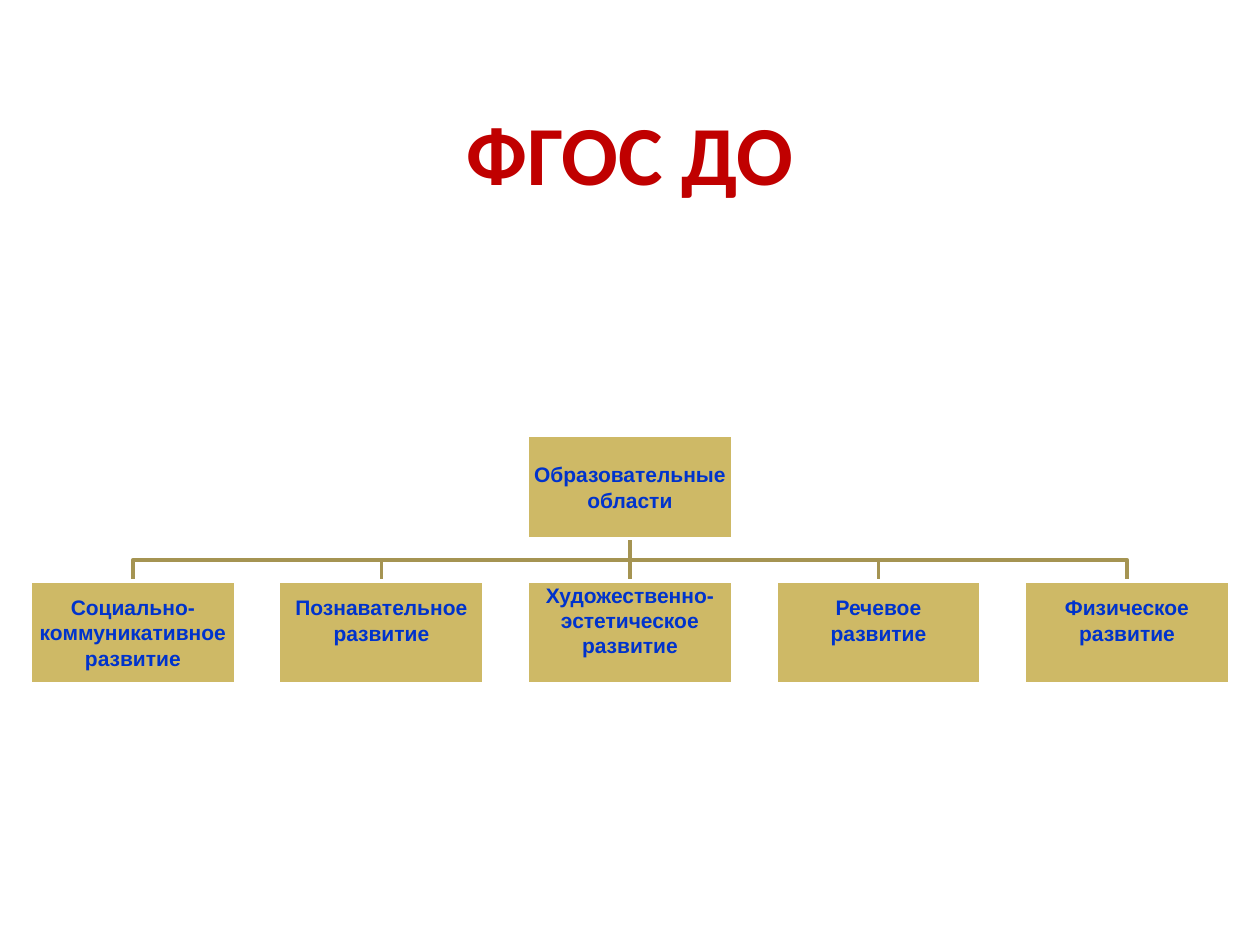
from dataclasses import dataclass

from lxml import etree
from pptx import Presentation, util as u
from pptx.dml.color import RGBColor
from pptx.enum import shapes, text
from pptx.oxml import ns


@dataclass(frozen=True)
class Theme:
    box_fill: RGBColor = RGBColor(0xCE, 0xB9, 0x66)
    box_border: RGBColor = RGBColor(0xFF, 0xFF, 0xFF)
    branch: RGBColor = RGBColor(0xA5, 0x94, 0x52)
    area: RGBColor = RGBColor(0x00, 0x33, 0xCC)
    heading: RGBColor = RGBColor(0xC0, 0x00, 0x00)
    area_font: str = "Arial"
    heading_font: str = "Calibri"
    area_size: int = u.Pt(12)
    heading_size: int = u.Pt(48)
    stroke: int = u.Pt(2)


class AreaChart:
    """Draws the heading, boxes and branches of an organisation chart on one slide."""

    def __init__(self, theme, slide):
        self.theme = theme
        self.canvas = slide.shapes

    def outline(self, part, color):
        part.line.color.rgb = color
        part.line.width = self.theme.stroke

    def label(self, frame, lines, frame_format, font_format, color):
        for name, value in frame_format.items():
            setattr(frame, name, value)
        frame.text = "\n".join(lines)
        for paragraph in frame.paragraphs:
            paragraph.alignment = text.PP_ALIGN.CENTER
            for name, value in font_format.items():
                setattr(paragraph.font, name, value)
            paragraph.font.color.rgb = color

    def heading(self, wording, left, top, width, height):
        theme = self.theme
        caption = self.canvas.add_textbox(left, top, width, height)
        self.label(
            caption.text_frame,
            [wording],
            {"word_wrap": False, "auto_size": text.MSO_AUTO_SIZE.SHAPE_TO_FIT_TEXT},
            {"name": theme.heading_font, "size": theme.heading_size, "bold": True},
            theme.heading,
        )

    def box(self, lines, left, top, width, height, lift=0):
        theme = self.theme
        area = self.canvas.add_shape(shapes.MSO_SHAPE.RECTANGLE, left, top, width, height)
        area.shadow.inherit = False
        area.fill.solid()
        area.fill.fore_color.rgb = theme.box_fill
        self.outline(area, theme.box_border)
        inset = u.Cm(0.03)
        self.label(
            area.text_frame,
            lines,
            {
                "margin_left": inset,
                "margin_top": inset,
                "margin_right": inset,
                "margin_bottom": inset + lift,
                "word_wrap": True,
                "vertical_anchor": text.MSO_ANCHOR.MIDDLE,
            },
            {"name": theme.area_font, "size": theme.area_size, "bold": True},
            theme.area,
        )
        return area

    def stem(self, x, top, bottom):
        trunk = self.canvas.add_connector(shapes.MSO_CONNECTOR.STRAIGHT, x, top, x, bottom)
        self.outline(trunk, self.theme.branch)
        etree.SubElement(trunk.element.spPr, ns.qn("a:effectLst"))
        return trunk

    def branch(self, start_x, end_x, top, bottom):
        middle = (top + bottom) // 2
        builder = self.canvas.build_freeform(start_x, top)
        builder.add_line_segments(
            [(start_x, middle), (end_x, middle), (end_x, bottom)], close=False
        )
        elbow = builder.convert_to_shape()
        elbow.shadow.inherit = False
        elbow.fill.background()
        self.outline(elbow, self.theme.branch)


def main():
    deck = Presentation()
    deck.slide_width, deck.slide_height = u.Cm(25.4), u.Cm(19.05)
    chart = AreaChart(Theme(), deck.slides.add_slide(deck.slide_layouts[6]))

    center = u.Cm(12.7)
    box_width, box_height, pitch = u.Cm(4.14), u.Cm(2.08), u.Cm(5.01)
    root_top, areas_top = u.Cm(8.78), u.Cm(11.71)
    root_bottom = root_top + box_height
    blank_line = u.Cm(0.5)
    areas = [
        (["Социально-", "коммуникативное", "развитие"], 0),
        (["Познавательное", "развитие"], blank_line),
        (["Художественно-", "эстетическое", "развитие"], blank_line),
        (["Речевое", "развитие"], blank_line),
        (["Физическое", "развитие"], blank_line),
    ]
    middle = len(areas) // 2
    centers = [center + (i - middle) * pitch for i in range(len(areas))]

    for x in centers:
        if x != center:
            chart.branch(center, x, root_bottom, areas_top)
    trunk = chart.stem(center, root_bottom, areas_top)

    root = chart.box(
        ["Образовательные", "области"],
        center - box_width // 2, root_top, box_width, box_height,
    )
    area_boxes = [
        chart.box(lines, x - box_width // 2, areas_top, box_width, box_height, lift)
        for x, (lines, lift) in zip(centers, areas)
    ]
    trunk.begin_connect(root, 2)
    trunk.end_connect(area_boxes[middle], 0)

    chart.heading("ФГОС ДО", u.Cm(9.12), u.Cm(1.93), u.Cm(7.16), u.Cm(2.31))
    deck.save("out.pptx")


if __name__ == "__main__":
    main()
